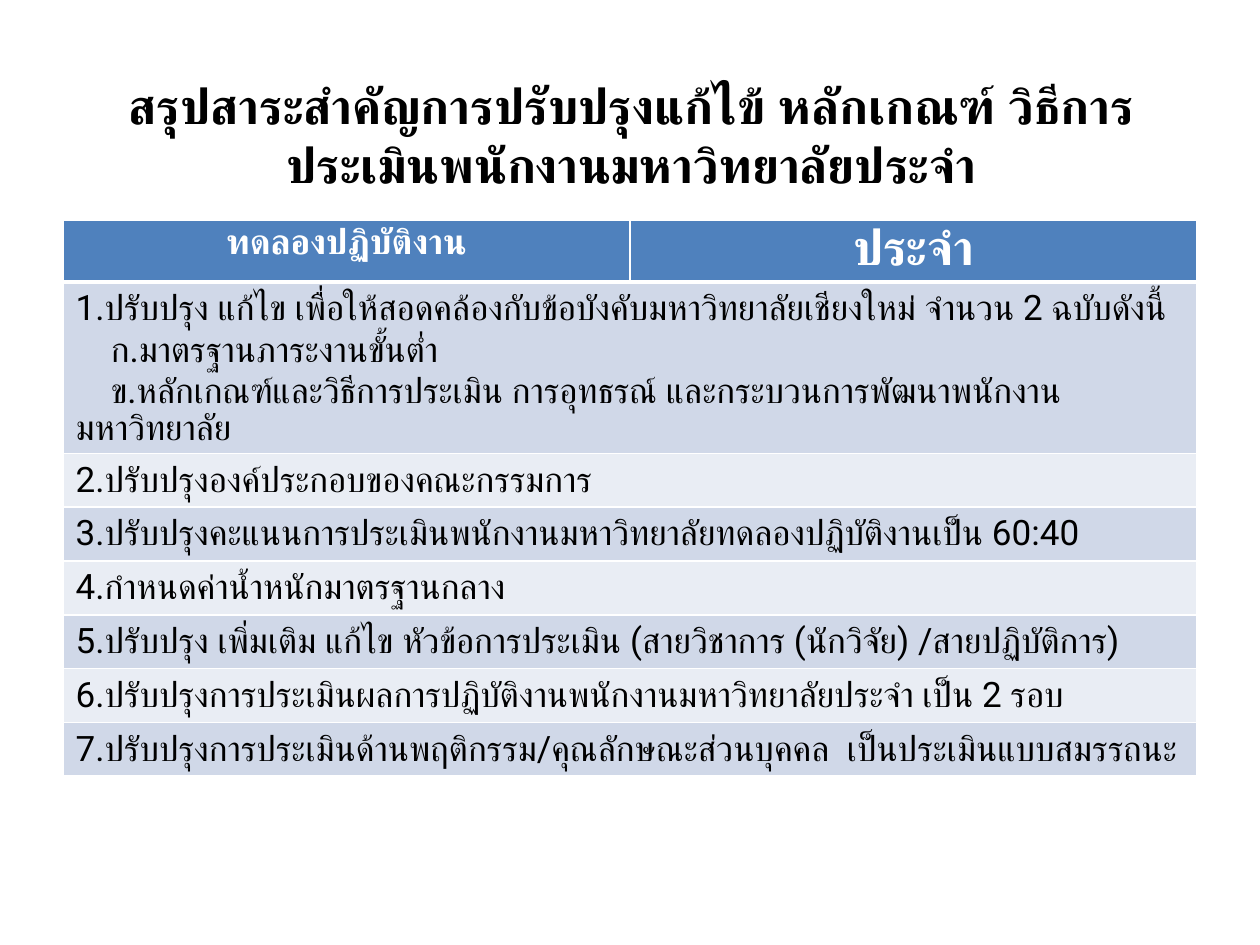
import dataclasses

import pptx
import pptx.dml.color
import pptx.enum.text
import pptx.oxml
import pptx.oxml.ns
import pptx.util
from pptx.util import Inches

RGBColor = pptx.dml.color.RGBColor
BLACK = RGBColor(0x00, 0x00, 0x00)
WHITE = RGBColor(0xFF, 0xFF, 0xFF)
HEADER_BLUE = RGBColor(0x4F, 0x81, 0xBD)
BAND_DARK = RGBColor(0xD0, 0xD8, 0xE8)
BAND_LIGHT = RGBColor(0xE9, 0xED, 0xF4)

TITLE = "สรุปสาระสำคัญการปรับปรุงแก้ไข้ หลักเกณฑ์ วิธีการประเมินพนักงานมหาวิทยาลัยประจำ"
ROW_HEIGHTS = [0.41] * 4 + [0.22] * 4
SUB_ITEM_INDENT = Inches(0.28)


@dataclasses.dataclass
class TextStyle:
    size: float
    font: str
    color: RGBColor
    bold: bool = False
    centered: bool = False


@dataclasses.dataclass
class Item:
    text: str
    sub_items: tuple[str, ...] = ()


TITLE_STYLE = TextStyle(28, "Roboto", BLACK, bold=True, centered=True)
ITEM_STYLE = TextStyle(20, "Roboto", BLACK)
HEADERS = [
    ("ทดลองปฏิบัติงาน", TextStyle(20, "Calibri", WHITE, True, True)),
    ("ประจำ", TextStyle(28, "Calibri", WHITE, True, True)),
]
ITEMS = [
    Item(
        "1.ปรับปรุง แก้ไข เพื่อให้สอดคล้องกับข้อบังคับมหาวิทยาลัยเชียงใหม่ จำนวน 2 ฉบับดังนี้",
        (
            "ก.มาตรฐานภาระงานขั้นต่ำ",
            "ข.หลักเกณฑ์และวิธีการประเมิน การอุทธรณ์ และกระบวนการพัฒนาพนักงานมหาวิทยาลัย",
        ),
    ),
    Item("2.ปรับปรุงองค์ประกอบของคณะกรรมการ"),
    Item("3.ปรับปรุงคะแนนการประเมินพนักงานมหาวิทยาลัยทดลองปฏิบัติงานเป็น 60:40"),
    Item("4.กำหนดค่าน้ำหนักมาตรฐานกลาง"),
    Item("5.ปรับปรุง เพิ่มเติม แก้ไข หัวข้อการประเมิน (สายวิชาการ (นักวิจัย) /สายปฏิบัติการ)"),
    Item("6.ปรับปรุงการประเมินผลการปฏิบัติงานพนักงานมหาวิทยาลัยประจำ เป็น 2 รอบ"),
    Item("7.ปรับปรุงการประเมินด้านพฤติกรรม/คุณลักษณะส่วนบุคคล  เป็นประเมินแบบสมรรถนะ"),
]


def format_text(text_frame, style: TextStyle) -> None:
    for paragraph in text_frame.paragraphs:
        if style.centered:
            paragraph.alignment = pptx.enum.text.PP_ALIGN.CENTER
        for run in paragraph.runs:
            run.font.size = pptx.util.Pt(style.size)
            run.font.name = style.font
            run.font.bold = style.bold
            run.font.color.rgb = style.color


def set_borders(cell, bottom_width: float = 1) -> None:
    """Draw white borders; they must come before the fill in the cell."""
    properties = cell._tc.get_or_add_tcPr()
    for side, width in (("L", 1), ("R", 1), ("T", 1), ("B", bottom_width)):
        properties.append(pptx.oxml.parse_xml(
            f'<a:ln{side} {pptx.oxml.ns.nsdecls("a")} w="{pptx.util.Pt(width)}">'
            f'<a:solidFill><a:srgbClr val="{WHITE}"/></a:solidFill></a:ln{side}>'
        ))


def fill_cell(cell, text: str, style: TextStyle, fill: RGBColor) -> None:
    cell.text_frame.text = text
    format_text(cell.text_frame, style)
    cell.fill.solid()
    cell.fill.fore_color.rgb = fill


def add_title(slide) -> None:
    title = slide.shapes.title
    title.left, title.top = Inches(0.51), Inches(0.44)
    title.width, title.height = Inches(9), Inches(1.25)
    title.text_frame.text = TITLE
    title.text_frame.vertical_anchor = pptx.enum.text.MSO_ANCHOR.MIDDLE
    format_text(title.text_frame, TITLE_STYLE)


def add_summary_table(slide) -> None:
    table = slide.shapes.add_table(
        len(ITEMS) + 1, len(HEADERS), Inches(0.5), Inches(1.75), Inches(9), Inches(4.27)
    ).table
    for row, height in zip(table.rows, ROW_HEIGHTS):
        row.height = Inches(height)

    # Header row
    for column, (text, style) in enumerate(HEADERS):
        cell = table.cell(0, column)
        set_borders(cell, bottom_width=3)
        fill_cell(cell, text, style, HEADER_BLUE)

    # Items across both columns, in alternating bands
    for index, item in enumerate(ITEMS):
        cell = table.cell(index + 1, 0)
        cell.merge(table.cell(index + 1, 1))
        for part in (cell, table.cell(index + 1, 1)):
            set_borders(part, bottom_width=1)
        lines = "\n".join((item.text, *item.sub_items))
        fill_cell(cell, lines, ITEM_STYLE, BAND_LIGHT if index % 2 else BAND_DARK)
        for paragraph in cell.text_frame.paragraphs[1:]:
            properties = paragraph._p.get_or_add_pPr()
            properties.set("marL", "0")
            properties.set("indent", str(SUB_ITEM_INDENT))


def main() -> None:
    presentation = pptx.Presentation()
    presentation.slide_width = Inches(10)
    presentation.slide_height = Inches(7.5)
    slide = presentation.slides.add_slide(presentation.slide_layouts[5])
    add_title(slide)
    add_summary_table(slide)
    presentation.save("out.pptx")


if __name__ == "__main__":
    main()
